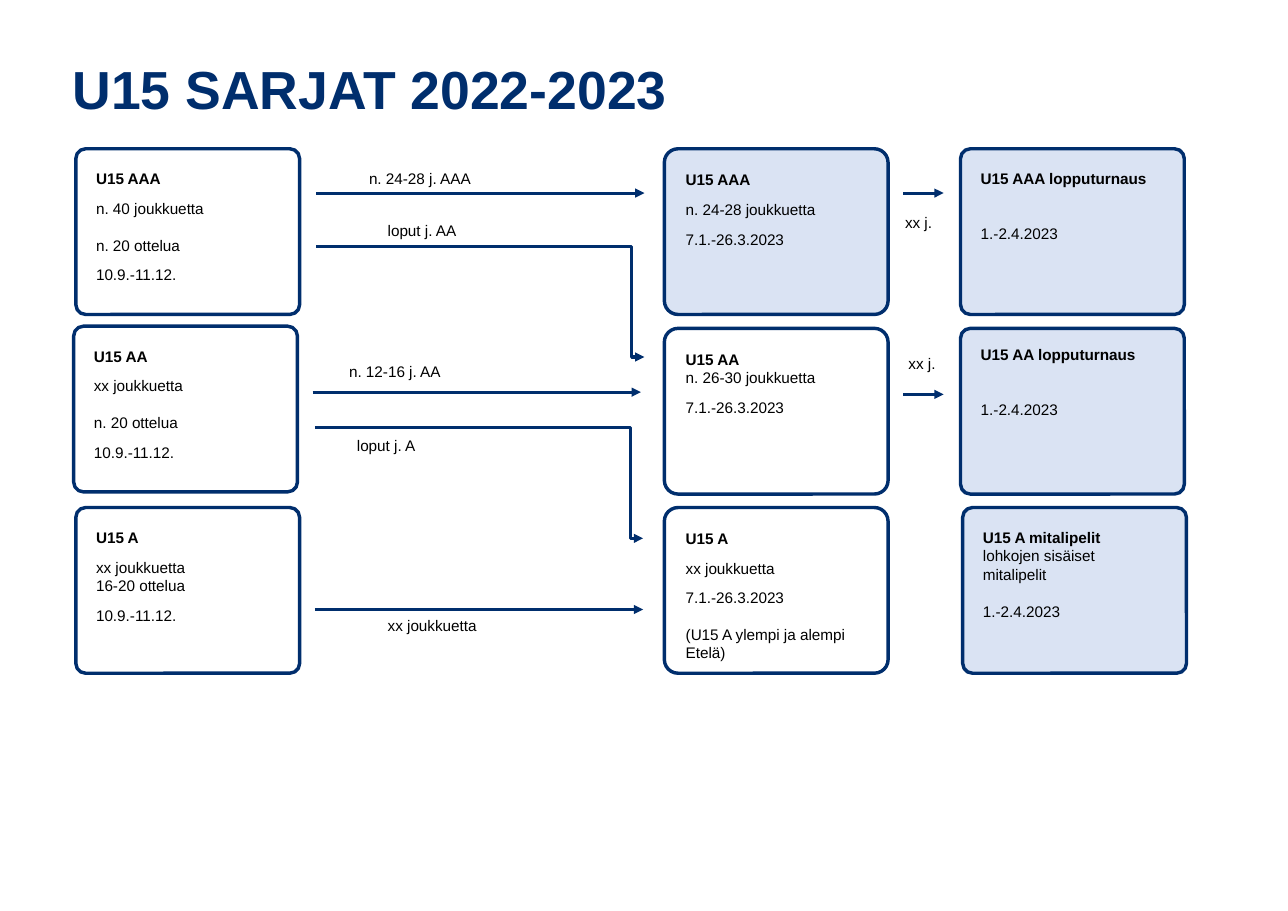
from lxml.etree import SubElement
from pptx import Presentation
from pptx.dml.color import RGBColor
from pptx.enum.shapes import MSO_CONNECTOR, MSO_SHAPE
from pptx.enum.text import MSO_ANCHOR, PP_ALIGN
from pptx.oxml.ns import qn
from pptx.util import Cm, Pt

NAVY, PALE, BLACK = "002E6D", "DAE3F3", "000000"
HALF, FULL = 7.3, 12  # gaps between text lines, in points


def paint(code):
    return RGBColor.from_string(code)


def write(frame, lines, size=10, tint=BLACK):
    """Write (text, gap before, bold) lines as left-aligned paragraphs."""
    frame.word_wrap = True
    frame.vertical_anchor = MSO_ANCHOR.TOP
    for num, (text, gap, bold) in enumerate(lines):
        para = frame.add_paragraph() if num else frame.paragraphs[0]
        para.alignment = PP_ALIGN.LEFT
        if gap:
            para.space_before = Pt(gap)
        run = para.add_run()
        run.text = text
        font = run.font
        font.name, font.size, font.bold = "Arial", Pt(size), bold
        font.color.rgb = paint(tint)


deck = Presentation()
deck.slide_width, deck.slide_height = Cm(29.7), Cm(21)
slide = deck.slides.add_slide(deck.slide_layouts[6])
shapes = slide.shapes

# Title
title = shapes.add_textbox(Cm(1.42), Cm(1.17), Cm(24.5), Cm(1.75))
write(title.text_frame, [("U15 SARJAT 2022-2023", 0, True)], 35, NAVY)

# Series boxes: left, top, text drop, corner, fill, heading, (text, gap) lines
LEFT, MID, RIGHT = 1.75, 15.32, 22.15
TOP, NEXT, LAST = 3.43, 7.57, 11.7
boxes = [
    (LEFT, TOP, 0.41, 0.059, None, "U15 AAA",
     [("n. 40 joukkuetta", HALF), ("n. 20 ottelua", FULL), ("10.9.-11.12.", HALF)]),
    (1.7, 7.52, 0.41, 0.059, None, "U15 AA",
     [("xx joukkuetta", HALF), ("n. 20 ottelua", FULL), ("10.9.-11.12.", HALF)]),
    (LEFT, LAST, 0.41, 0.059, None, "U15 A",
     [("xx joukkuetta", HALF), ("16-20 ottelua", 0), ("10.9.-11.12.", HALF)]),
    (MID, TOP, 0.41, 0.083, PALE, "U15 AAA",
     [("n. 24-28 joukkuetta", HALF), ("7.1.-26.3.2023", HALF)]),
    (MID, NEXT, 0.41, 0.083, None, "U15 AA",
     [("n. 26-30 joukkuetta", 0), ("7.1.-26.3.2023", HALF)]),
    (MID, LAST, 0.41, 0.083, None, "U15 A",
     [("xx joukkuetta", HALF), ("7.1.-26.3.2023", HALF),
      ("(U15 A ylempi ja alempi Etelä)", FULL)]),
    (RIGHT, TOP, 0.41, 0.059, PALE, "U15 AAA lopputurnaus",
     [("1.-2.4.2023", 2 * FULL)]),
    (RIGHT, NEXT, 0.33, 0.059, PALE, "U15 AA lopputurnaus",
     [("1.-2.4.2023", 2 * FULL)]),
    (22.2, LAST, 0.41, 0.059, PALE, "U15 A mitalipelit",
     [("lohkojen sisäiset mitalipelit", 0), ("1.-2.4.2023", FULL)]),
]
for x, y, drop, curve, fill, head, lines in boxes:
    box = shapes.add_shape(MSO_SHAPE.ROUNDED_RECTANGLE, Cm(x), Cm(y), Cm(5.16), Cm(3.82))
    box.shadow.inherit = False
    box.adjustments[0] = curve
    if fill:
        box.fill.solid()
        box.fill.fore_color.rgb = paint(fill)
    else:
        box.fill.background()
    box.line.color.rgb = paint(NAVY)
    box.line.width = Pt(2.25)
    frame = box.text_frame
    frame.margin_left, frame.margin_right = Cm(0.4), Cm(0.66)
    frame.margin_top, frame.margin_bottom = Cm(drop), Cm(0.1)
    write(frame, [(head, 0, True)] + [(text, gap, False) for text, gap in lines])

# Arrows: start x, start y, length, fall (a fall makes an elbow)
arrows = [
    (7.29, 4.45, 7.57, 0),
    (7.29, 5.69, 7.57, 2.54),
    (7.21, 9.04, 7.57, 0),
    (7.26, 9.86, 7.57, 2.55),
    (7.26, 14.05, 7.57, 0),
    (20.83, 4.45, 0.93, 0),
    (20.83, 9.09, 0.93, 0),
]
for x, y, wide, fall in arrows:
    kind = MSO_CONNECTOR.ELBOW if fall else MSO_CONNECTOR.STRAIGHT
    arrow = shapes.add_connector(kind, Cm(x), Cm(y), Cm(x + wide), Cm(y + fall))
    arrow.line.color.rgb = paint(NAVY)
    arrow.line.width = Pt(2)
    props = arrow._element.spPr
    SubElement(props.find(qn("a:ln")), qn("a:tailEnd"), type="triangle")
    SubElement(props, qn("a:effectLst"))
    if fall:
        guides = props.find(qn("a:prstGeom")).get_or_add_avLst()
        SubElement(guides, qn("a:gd"), name="adj1", fmla="val 96100")

# Arrow labels: left, top, width, text
labels = [
    (8.26, 3.78, 5.69, "n. 24-28 j. AAA"),
    (8.69, 4.98, 5.69, "loput j. AA"),
    (7.8, 8.23, 5.69, "n. 12-16 j. AA"),
    (7.98, 9.93, 5.69, "loput j. A"),
    (8.69, 14.07, 4.6, "xx joukkuetta"),
    (20.62, 4.78, 1.45, "xx j."),
    (20.7, 8.03, 1.45, "xx j."),
]
for x, y, wide, text in labels:
    label = shapes.add_textbox(Cm(x), Cm(y), Cm(wide), Cm(1.45))
    write(label.text_frame, [(text, 0, False)])

deck.save("out.pptx")
